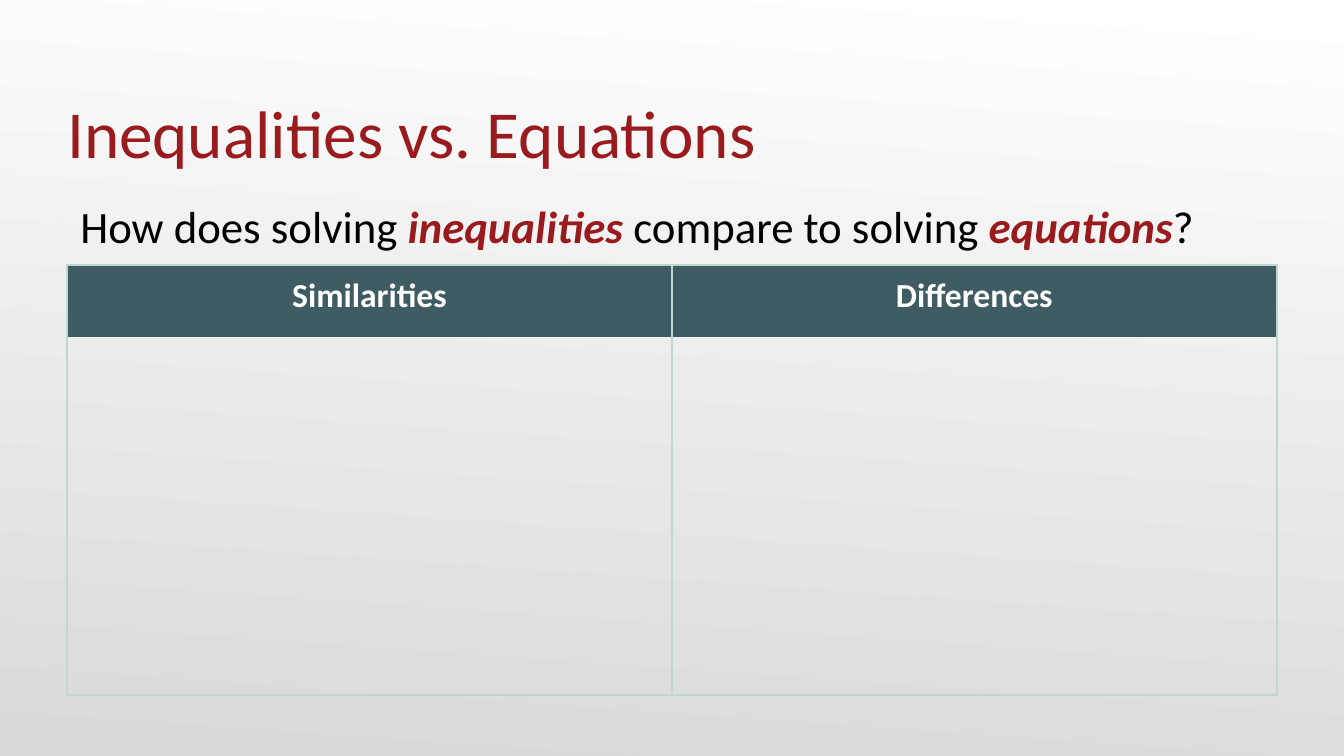
from dataclasses import dataclass

from lxml.etree import SubElement
from pptx import Presentation
from pptx.dml.color import RGBColor
from pptx.enum.text import MSO_ANCHOR, PP_ALIGN
from pptx.oxml.ns import qn
from pptx.util import Inches, Pt


@dataclass(frozen=True)
class Theme:
    font: str = "Calibri"
    accent: str = "991B1E"
    text: str = "000000"
    header_fill: str = "3E5C61"
    header_text: str = "FFFFFF"
    border: str = "BED7D3"
    background: tuple = ("FFFFFF", "D9D9D9")
    title_size: int = 36
    body_size: int = 24
    header_size: int = 18
    border_width: int = 1


class SlideBuilder:
    def __init__(self, slide, theme):
        self.slide = slide
        self.theme = theme

    def background(self, angle):
        """Fill with the theme gradient; angle is counter-clockwise."""
        fill = self.slide.background.fill
        fill.gradient()
        fill.gradient_angle = angle
        for stop, color in zip(fill.gradient_stops, self.theme.background):
            stop.color.rgb = RGBColor.from_string(color)

    def style(self, font, size, color, bold=False):
        font.name = self.theme.font
        font.size = Pt(size)
        font.bold = bold
        font.color.rgb = RGBColor.from_string(color)

    def text_box(self, left, top, width, height, insets, anchor=MSO_ANCHOR.TOP):
        """Add a wrapping text box and return its first paragraph."""
        shape = self.slide.shapes.add_textbox(
            Inches(left), Inches(top), Inches(width), Inches(height))
        frame = shape.text_frame
        frame.word_wrap = True
        frame.vertical_anchor = anchor
        (frame.margin_left, frame.margin_top,
         frame.margin_right, frame.margin_bottom) = map(Inches, insets)
        return frame.paragraphs[0]

    def title(self, text):
        paragraph = self.text_box(0.5, 0.34, 9, 0.94, (0, 0.05, 0, 0), MSO_ANCHOR.BOTTOM)
        paragraph.text = text
        self.style(paragraph.font, self.theme.title_size, self.theme.accent)

    def question(self, parts):
        """Write (text, emphasized) parts as one line."""
        paragraph = self.text_box(0.5, 1.43, 9, 3.76, (0.1, 0.05, 0.1, 0.05))
        for text, emphasized in parts:
            run = paragraph.add_run()
            run.text = text
            color = self.theme.accent if emphasized else self.theme.text
            self.style(run.font, self.theme.body_size, color, emphasized)
            run.font.italic = emphasized

    def cell_borders(self, cell, hidden_side):
        properties = cell._tc.get_or_add_tcPr()
        for side in ("a:lnL", "a:lnR", "a:lnT", "a:lnB"):
            line = SubElement(properties, qn(side), w=str(Pt(self.theme.border_width)))
            if side == hidden_side:
                SubElement(line, qn("a:noFill"))
            else:
                fill = SubElement(line, qn("a:solidFill"))
                SubElement(fill, qn("a:srgbClr"), val=self.theme.border)

    def comparison_table(self, headings, row_heights):
        """Add a header row above an empty row, with no line between them."""
        table = self.slide.shapes.add_table(
            len(row_heights), len(headings), Inches(0.5), Inches(1.97),
            Inches(9), Inches(sum(row_heights))).table
        for row, height in zip(table.rows, row_heights):
            row.height = Inches(height)
        for column, heading in enumerate(headings):
            header, body = table.cell(0, column), table.cell(1, column)
            self.cell_borders(header, hidden_side="a:lnB")
            self.cell_borders(body, hidden_side="a:lnT")
            body.fill.background()
            header.fill.solid()
            header.fill.fore_color.rgb = RGBColor.from_string(self.theme.header_fill)
            header.margin_left = header.margin_right = Inches(0.08)
            header.margin_top = header.margin_bottom = Inches(0.08)
            header.text = heading
            paragraph = header.text_frame.paragraphs[0]
            paragraph.alignment = PP_ALIGN.CENTER
            self.style(paragraph.font, self.theme.header_size, self.theme.header_text, True)


def main():
    presentation = Presentation()
    presentation.slide_width = Inches(10)
    presentation.slide_height = Inches(10 * 9 / 16)
    slide = presentation.slides.add_slide(presentation.slide_layouts[6])

    builder = SlideBuilder(slide, Theme())
    builder.background(angle=266)
    builder.question([
        ("How does solving ", False),
        ("inequalities", True),
        (" compare to solving ", False),
        ("equations", True),
        ("?", False),
    ])
    builder.title("Inequalities vs. Equations")
    builder.comparison_table(["Similarities", "Differences"], row_heights=[0.54, 2.66])
    presentation.save("out.pptx")


if __name__ == "__main__":
    main()
